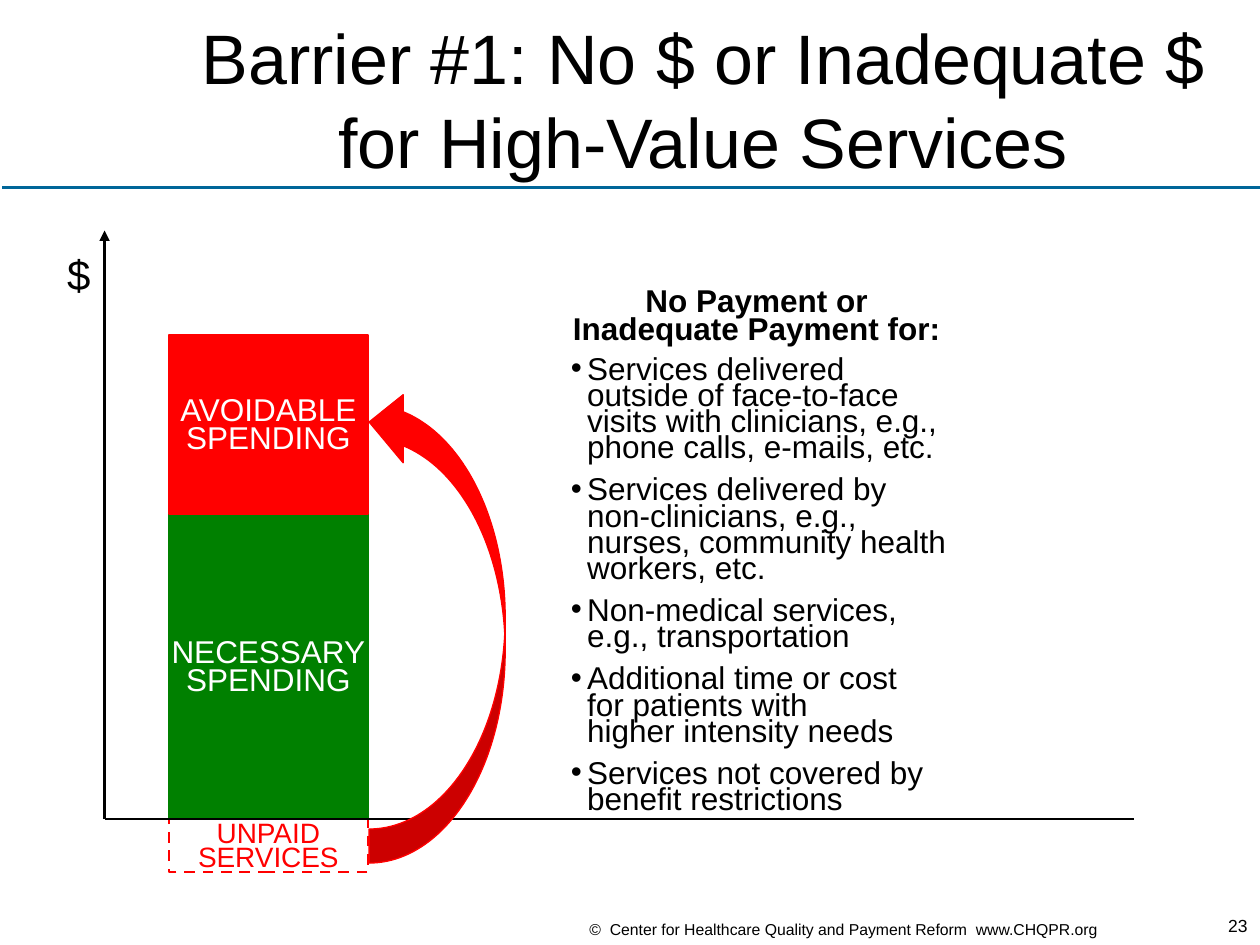
from dataclasses import dataclass
from typing import Optional

from lxml.etree import SubElement
from pptx import Presentation
from pptx.dml.color import RGBColor
from pptx.enum.dml import MSO_LINE
from pptx.enum.shapes import MSO_CONNECTOR, MSO_SHAPE
from pptx.enum.text import MSO_ANCHOR, MSO_AUTO_SIZE, PP_ALIGN
from pptx.oxml.ns import qn
from pptx.util import Inches, Pt


@dataclass(frozen=True)
class Theme:
    font: str = "Arial"
    black: str = "000000"
    white: str = "FFFFFF"
    red: str = "FF0000"
    green: str = "008000"
    blue: str = "006699"
    title: int = 40
    axis: int = 24
    body: int = 18
    small: int = 16
    number: int = 10
    footer: int = 9


@dataclass(frozen=True)
class Style:
    size: int
    color: str
    bold: bool = False
    align: PP_ALIGN = PP_ALIGN.CENTER
    spacing: Optional[float] = None  # a Pt length is exact, a float is relative
    before: int = 0
    bullet: bool = False


@dataclass(frozen=True)
class Bar:
    text: str
    height: float
    top: float
    style: Style
    fill: Optional[str] = None


T = Theme()
BAR_LEFT, BAR_WIDTH = 1.34, 1.58
AXIS_X, AXIS_Y = 0.83, 6.5
LIST_LEFT = 4.53
BULLET_INDENT = Inches(0.13)

BAR_STYLE = Style(T.body, T.white, spacing=Pt(16))
UNPAID_STYLE = Style(T.small, T.red, spacing=Pt(14))
BARS = [
    Bar("NECESSARY\nSPENDING", 2.42, AXIS_Y - 2.42, BAR_STYLE, T.green),
    Bar("AVOIDABLE\nSPENDING", 1.42, AXIS_Y - 2.42 - 1.42, BAR_STYLE, T.red),
    Bar("UNPAID\nSERVICES", 0.42, AXIS_Y, UNPAID_STYLE),
]
UNPAID_SERVICES = [
    "Services delivered\noutside of face-to-face\nvisits with clinicians, e.g.,\nphone calls, e-mails, etc.",
    "Services delivered by\nnon-clinicians, e.g.,\nnurses, community health\nworkers, etc.",
    "Non-medical services,\ne.g., transportation",
    "Additional time or cost\nfor patients with\nhigher intensity needs",
    "Services not covered by\nbenefit restrictions",
]


def rgb(color: str) -> RGBColor:
    return RGBColor.from_string(color)


def add_bullet(p) -> None:
    pPr = p._p.get_or_add_pPr()
    pPr.set("marL", str(BULLET_INDENT))
    pPr.set("indent", str(-BULLET_INDENT))
    SubElement(pPr, qn("a:buFont"), typeface=T.font)
    SubElement(pPr, qn("a:buChar"), char="•")


def write(tf, texts: list[str], style: Style) -> None:
    """Write one paragraph per text; a line feed becomes a line break."""
    for i, text in enumerate(texts):
        p = tf.add_paragraph() if i else tf.paragraphs[0]
        if style.bullet:
            add_bullet(p)
        p.text = text.replace("\n", "\v")
        p.alignment = style.align
        if style.spacing:
            p.line_spacing = style.spacing
        if i and style.before:
            p.space_before = Pt(style.before)
        font_format = {"name": T.font, "size": Pt(style.size), "bold": style.bold}
        for r in p.runs:
            for key, value in font_format.items():
                setattr(r.font, key, value)
            r.font.color.rgb = rgb(style.color)


def add_text(s, box: tuple, texts: list[str], style: Style, wrap: bool = False,
             side_inset: float = 0.1, anchor=MSO_ANCHOR.TOP, grow: bool = True) -> None:
    tf = s.shapes.add_textbox(*map(Inches, box)).text_frame
    frame_format = {
        "word_wrap": wrap,
        "auto_size": MSO_AUTO_SIZE.SHAPE_TO_FIT_TEXT if grow else MSO_AUTO_SIZE.NONE,
        "vertical_anchor": anchor,
        "margin_left": Inches(side_inset),
        "margin_right": Inches(side_inset),
    }
    for key, value in frame_format.items():
        setattr(tf, key, value)
    write(tf, texts, style)


def add_bar(s, bar: Bar) -> None:
    sp = s.shapes.add_shape(MSO_SHAPE.RECTANGLE, Inches(BAR_LEFT), Inches(bar.top),
                            Inches(BAR_WIDTH), Inches(bar.height))
    sp.shadow.inherit = False
    sp.line.width = Pt(1.5)
    sp.line.color.rgb = rgb(bar.fill or bar.style.color)
    if bar.fill:
        sp.fill.solid()
        sp.fill.fore_color.rgb = rgb(bar.fill)
    else:
        sp.fill.background()
        sp.line.dash_style = MSO_LINE.DASH
    tf = sp.text_frame
    frame_format = {"margin_left": 0, "margin_right": 0, "margin_top": Inches(0.1),
                    "margin_bottom": Inches(0.05), "word_wrap": True,
                    "vertical_anchor": MSO_ANCHOR.MIDDLE}
    for key, value in frame_format.items():
        setattr(tf, key, value)
    write(tf, [bar.text], bar.style)


def add_line(s, start: tuple, end: tuple, color: str, width: float, arrow: bool = False) -> None:
    line = s.shapes.add_connector(MSO_CONNECTOR.STRAIGHT, *map(Inches, start + end))
    line.line.color.rgb = rgb(color)
    line.line.width = Pt(width)
    if arrow:
        SubElement(line.line._get_or_add_ln(), qn("a:tailEnd"), type="triangle")
    SubElement(line._element.spPr, qn("a:effectLst"))


def add_curved_arrow(s) -> None:
    """Arrow from the unpaid services up to the avoidable spending."""
    sp = s.shapes.add_shape(MSO_SHAPE.CURVED_RIGHT_ARROW, Inches(2.93), Inches(3.08),
                            Inches(1.08), Inches(3.77))
    sp.shadow.inherit = False
    sp.fill.solid()
    sp.fill.fore_color.rgb = rgb(T.red)
    sp.line.color.rgb = rgb(T.red)
    sp.line.width = Pt(0.75)
    for flip in ("flipH", "flipV"):
        sp._element.spPr.xfrm.set(flip, "1")


def main() -> None:
    prs = Presentation()
    prs.slide_width, prs.slide_height = Inches(10), Inches(7.5)
    s = prs.slides.add_slide(prs.slide_layouts[6])

    add_line(s, (0.02, 1.49), (10, 1.49), T.blue, 2)
    add_text(s, (9.5, 7.25, 0.5, 0.23), ["23"],
             Style(T.number, T.black, align=PP_ALIGN.RIGHT, spacing=0.75), wrap=True)
    add_text(s, (4.58, 7.29, 4.31, 0.21),
             ["©  Center for Healthcare Quality and Payment Reform  www.CHQPR.org"],
             Style(T.footer, T.black, align=PP_ALIGN.LEFT, spacing=0.7))
    add_text(s, (1.25, 0.11, 8.66, 1.34),
             ["Barrier #1: No $ or Inadequate $ for High-Value Services"],
             Style(T.title, T.black), wrap=True, anchor=MSO_ANCHOR.MIDDLE, grow=False)

    for bar in BARS:
        add_bar(s, bar)
    add_line(s, (AXIS_X, AXIS_Y), (AXIS_X, 1.83), T.black, 1.5, arrow=True)
    add_text(s, (0.43, 1.92, 0.39, 0.5), ["$"], Style(T.axis, T.black))
    add_line(s, (AXIS_X, AXIS_Y), (9, AXIS_Y), T.black, 1.5)

    add_text(s, (LIST_LEFT, 2.26, 2.95, 0.55), ["No Payment or\nInadequate Payment for:"],
             Style(T.body, T.black, bold=True, spacing=Pt(16)), side_inset=0)
    add_text(s, (LIST_LEFT, 2.81, 3.01, 3.76), UNPAID_SERVICES,
             Style(T.body, T.black, align=PP_ALIGN.LEFT, spacing=Pt(15), before=9, bullet=True),
             side_inset=0)
    add_curved_arrow(s)

    prs.save("out.pptx")


if __name__ == "__main__":
    main()
